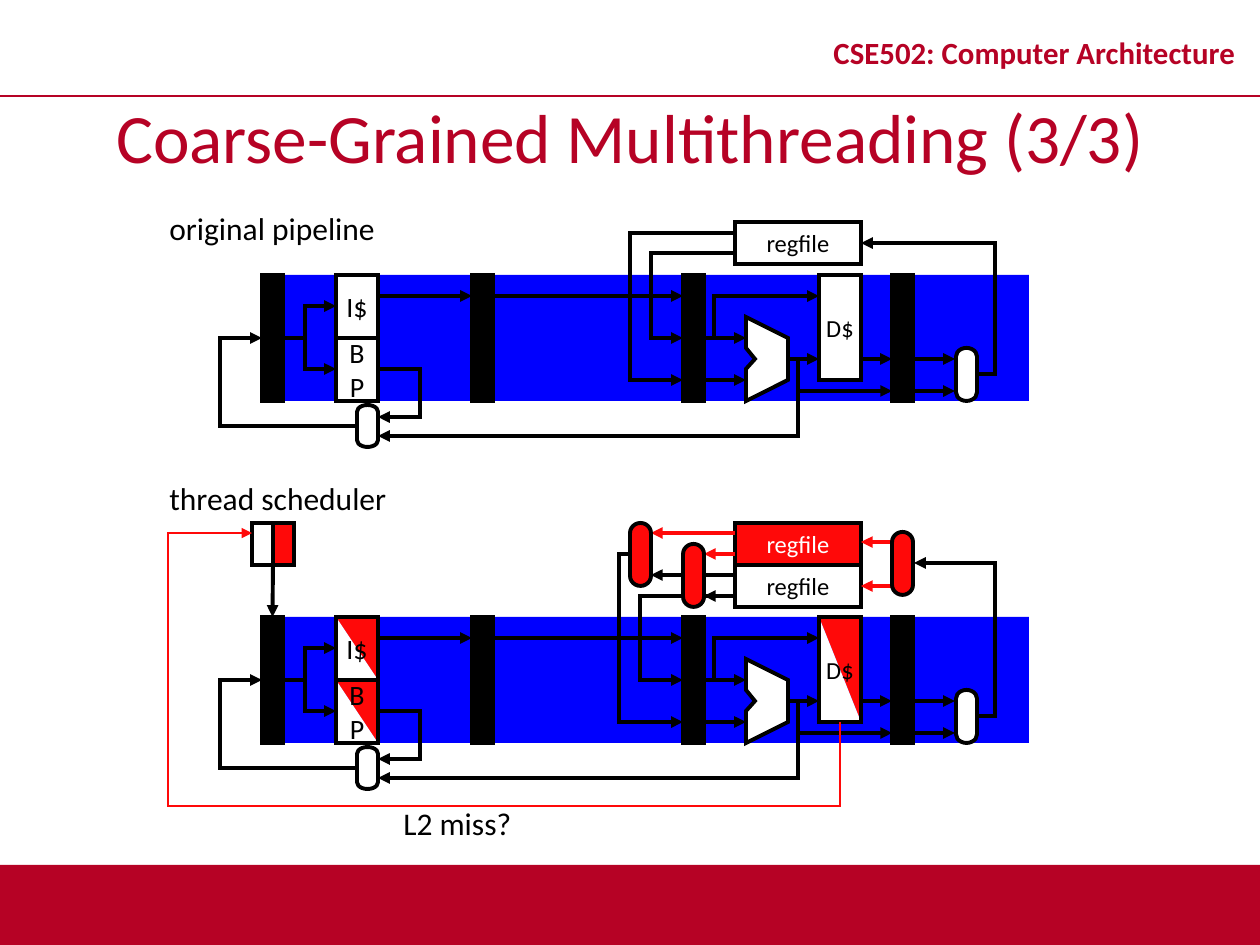
"""Builds the slide on coarse-grained multithreading with two pipeline diagrams."""
from pptx import Presentation
from pptx import util as u
from pptx.dml.color import RGBColor
from pptx.enum import shapes, text
from pptx.oxml import ns, xmlchemy

EMU_PER_PX = 914400 / 126
FONT = "Calibri"
CRIMSON = RGBColor(0xB6, 0x02, 0x25)
BLUE = RGBColor(0x00, 0x00, 0xFF)
RED = RGBColor(0xFF, 0x09, 0x09)
BLACK = RGBColor(0x00, 0x00, 0x00)
WHITE = RGBColor(0xFF, 0xFF, 0xFF)
SHAPE = shapes.MSO_SHAPE
CENTER = text.PP_ALIGN.CENTER
MIDDLE = text.MSO_ANCHOR.MIDDLE


def px(*lengths):
    """Turn pixel lengths into EMU."""
    return [u.Emu(round(length * EMU_PER_PX)) for length in lengths]


def write(shape, words, size, color=BLACK, bold=False, align=CENTER,
          anchor=MIDDLE, wrap=False, spacing=None):
    """Fill a shape with formatted paragraphs, one for each line of words."""
    frame = shape.text_frame
    frame.word_wrap, frame.vertical_anchor = wrap, anchor
    frame.text = words
    for para in frame.paragraphs:
        para.alignment, para.line_spacing = align, spacing
        for span in para.runs:
            span.font.name, span.font.size = FONT, u.Pt(size)
            span.font.bold, span.font.color.rgb = bold, color


def paint(shape, fill=None, line=None):
    """Set fill and outline, with square corners and no shadow."""
    shape.shadow.inherit = False
    if fill is None:
        shape.fill.background()
    else:
        shape.fill.solid()
        shape.fill.fore_color.rgb = fill
    if line is None:
        shape.line.fill.background()
    else:
        shape.line.color.rgb, shape.line.width = line, u.Pt(2.25)
        add_line_part(shape, "miter", lim="800000")


def add_line_part(shape, tag, **attributes):
    """Append a child such as a join or an arrowhead to the line."""
    line = shape._element.spPr.find(ns.qn("a:ln"))
    part = xmlchemy.OxmlElement(f"a:{tag}")
    for name, setting in attributes.items():
        part.set(name, setting)
    line.append(part)


def add_box(page, x, y, w, h, fill=WHITE, line=BLACK, kind=SHAPE.RECTANGLE):
    """Add a preset shape."""
    box = page.shapes.add_shape(kind, *px(x, y, w, h))
    paint(box, fill, line)
    return box


def add_label(page, words, x, y, w):
    """Add a caption that stands beside a diagram."""
    label = page.shapes.add_textbox(*px(x, y, w, 50))
    write(label, words, 18, align=text.PP_ALIGN.LEFT, anchor=text.MSO_ANCHOR.TOP)
    label.text_frame.auto_size = text.MSO_AUTO_SIZE.SHAPE_TO_FIT_TEXT


def add_mux(page, x, y, h, fill=WHITE):
    """Add an upright multiplexer from a turned terminator."""
    left, top = x + (21 - h) / 2, y + (h - 21) / 2
    mux = add_box(page, left, top, h, 21, fill, kind=SHAPE.FLOWCHART_TERMINATOR)
    mux.rotation = 90


def add_outline(page, points, close):
    """Add a freeform through the points."""
    (x, y), *rest = points
    builder = page.shapes.build_freeform(x, y, scale=EMU_PER_PX)
    builder.add_line_segments(rest, close=close)
    return builder.convert_to_shape()


def add_wire(page, *points, color=BLACK, width=2.25, arrow=True):
    """Add a straight connector, or a bent line when there are corners."""
    if len(points) == 2:
        wire = page.shapes.add_connector(
            shapes.MSO_CONNECTOR.STRAIGHT, *px(*points[0], *points[1]))
        wire.line.color.rgb = color
        wire._element.spPr.append(xmlchemy.OxmlElement("a:effectLst"))
    else:
        wire = add_outline(page, points, close=False)
        paint(wire, line=color)
    wire.line.width = u.Pt(width)
    if arrow:
        add_line_part(wire, "tailEnd", type="triangle")
    return wire


def add_unit(page, words, size, x, y, h, split):
    """Add a pipeline unit, shared by two threads when split."""
    if split:
        half = add_box(page, x, y, 42, h, RED, None, SHAPE.RIGHT_TRIANGLE)
        half.rotation = 180
        add_box(page, x, y, 42, h, WHITE, None, SHAPE.RIGHT_TRIANGLE)
    unit = add_box(page, x, y, 42, h, None if split else WHITE)
    write(unit, words, size)


def add_regfile(page, y, fill=WHITE, color=BLACK):
    """Add a register file."""
    regfile = add_box(page, 735, y, 126, 42, fill)
    write(regfile, "regfile", 14, color)
    return regfile


def add_pipeline(page, top, split=False):
    """Add the stages common to both diagrams and return the first latch."""
    def wire(*points, **style):
        return add_wire(page, *[(x, top + y) for x, y in points], **style)

    add_box(page, 284, top, 745, 126, BLUE, None)
    latches = [add_box(page, x, top, 21, 126, BLACK) for x in (262, 472, 683, 892)]
    add_unit(page, "I$", 16, 336, top, 63, split)
    add_unit(page, "B\nP", 16, 336, top + 63, 63, split)
    add_unit(page, "D$", 14, 819, top, 105, split)
    alu = [(746, 42), (746, 73), (755, 84), (746, 94), (746, 126), (788, 105), (788, 63)]
    paint(add_outline(page, [(x, top + y) for x, y in alu], close=True), WHITE, BLACK)

    wire((283, 63), (305, 63), arrow=False).begin_connect(latches[0], 3)
    wire((704, 63), (746, 63)).begin_connect(latches[2], 3)
    for start, end, y in [(378, 472, 21), (494, 683, 21), (704, 746, 105),
                          (788, 819, 84), (861, 892, 84), (914, 955, 84),
                          (914, 955, 116)]:
        wire((start, y), (end, y))
    for y in (31, 94):
        wire((305, 73), (305, y), (336, y))
    wire((714, 63), (714, 21), (819, 21))
    wire((798, 84), (798, 116), (892, 116))
    wire((378, 94), (420, 94), (420, 142), (378, 142))
    wire((798, 84), (798, 161), (378, 161))
    wire((357, 151), (220, 151), (220, 63), (262, 63))
    add_mux(page, 956, top + 73, 53)
    add_mux(page, 357, top + 130, 42)
    return latches[0]


def add_original(page):
    """Add the single-threaded pipeline."""
    add_pipeline(page, 275)
    add_regfile(page, 222)
    add_wire(page, (735, 253), (651, 253), (651, 338), (683, 338))
    add_wire(page, (735, 233), (630, 233), (630, 380), (683, 380))
    add_wire(page, (977, 374), (995, 374), (995, 243), (861, 243))
    add_label(page, "original pipeline", 157, 203, 233)


def add_multithreaded(page):
    """Add the pipeline with two register files and a thread scheduler."""
    first_latch = add_pipeline(page, 617, split=True)
    white_file = add_regfile(page, 565)
    add_regfile(page, 523, RED, WHITE)
    add_wire(page, (735, 596), (640, 596), (640, 680), (683, 680))
    add_wire(page, (629, 554), (619, 554), (619, 722), (683, 722))
    add_wire(page, (977, 716), (995, 716), (995, 563), (914, 563))
    for end, y in [(651, 533), (704, 554)]:
        add_wire(page, (735, y), (end, y), color=RED)
        add_wire(page, (735, y + 42), (end, y + 42))
    add_wire(page, (892, 542), (861, 542), color=RED)
    add_wire(page, (892, 586), (861, 586), color=RED).end_connect(white_file, 3)
    for x, y in [(630, 523), (683, 544), (892, 532)]:
        add_mux(page, x, y, 63, RED)

    add_box(page, 273, 523, 21, 42, RED)
    add_box(page, 252, 523, 21, 42)
    add_wire(page, (273, 565), (273, 617)).end_connect(first_latch, 0)
    add_wire(page, (840, 722), (840, 806), (168, 806), (168, 533), (252, 533),
             color=RED, width=1)
    add_label(page, "thread scheduler", 157, 473, 244)
    add_label(page, "L2 miss?", 391, 798, 151)


def add_frame(page):
    """Add the title, the course header and the footer band."""
    title = page.shapes.title
    title.left, title.top, title.width, title.height = px(0, 96, 1260, 79)
    write(title, "Coarse-Grained Multithreading (3/3)", 39.6, CRIMSON, wrap=True)
    title.text_frame.auto_size = text.MSO_AUTO_SIZE.NONE
    add_box(page, 0, 865, 1260, 80, CRIMSON, None)
    add_wire(page, (0, 96), (1260, 96), color=CRIMSON, width=1, arrow=False)
    header = page.shapes.add_textbox(*px(809, 16, 451, 79))
    write(header, "CSE502: Computer Architecture", 17.6, CRIMSON, bold=True,
          wrap=True, spacing=0.8)


def main():
    """Build and save the deck."""
    deck = Presentation()
    deck.slide_width, deck.slide_height = px(1260, 945)
    page = deck.slides.add_slide(deck.slide_layouts[5])
    add_frame(page)
    add_original(page)
    add_multithreaded(page)
    deck.save("out.pptx")


if __name__ == "__main__":
    main()
